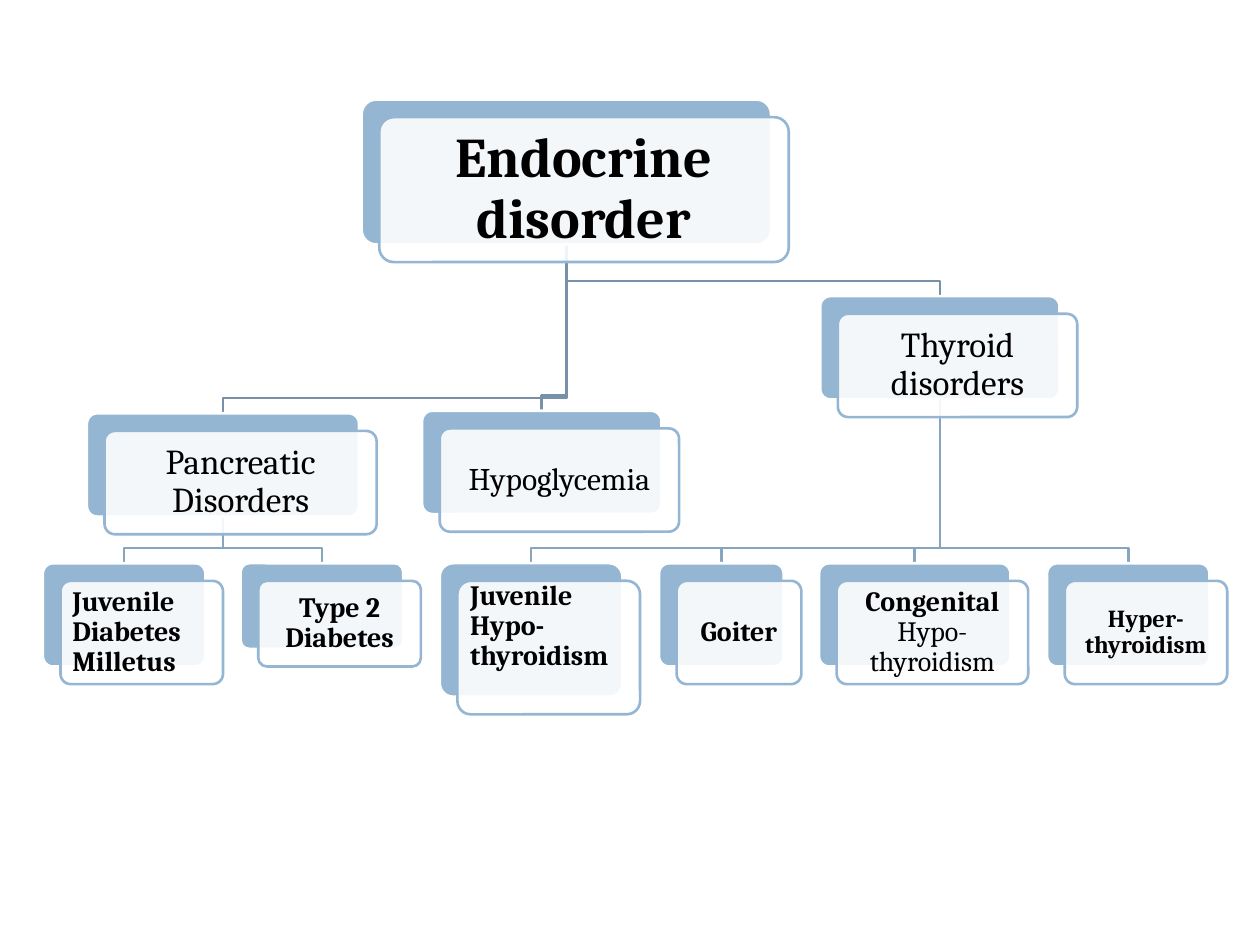
import dataclasses
import lxml.etree
import pptx
import pptx.dml.color
import pptx.enum.shapes
import pptx.enum.text
import pptx.oxml.ns
import pptx.util

ALIGN = pptx.enum.text.PP_ALIGN
ROUND = pptx.enum.shapes.MSO_SHAPE.ROUNDED_RECTANGLE
COLS, ROWS = 100, 75  # grid cells of a tenth of an inch
SHIFT = 1.4           # front card lies this far right and down
DROP = 1.2            # last stretch of a link above its child


@dataclasses.dataclass(frozen=True)
class Theme:
    font: str = "Cambria"
    ink: str = "000000"
    card: str = "94B6D2"
    paper: str = "FFFFFF"
    trunk: str = "7792A8"
    twig: str = "86A5BF"
    line: float = 1.5
    title: int = 32
    head: int = 20
    mid: int = 18
    leaf: int = 16
    small: int = 14


THEME = Theme()


@dataclasses.dataclass(frozen=True)
class Node:
    left: float
    top: float
    width: float
    height: float
    size: int
    runs: tuple  # pairs of text and bold
    pad: float = 0.7
    lift: float = 0  # extra room below the text
    align: int = ALIGN.CENTER

    @property
    def mid(self):
        return self.left + self.width / 2


def cell(count):
    return pptx.util.Inches(count / 10)


def color(code):
    return pptx.dml.color.RGBColor.from_string(code)


def stroke(shape, code):
    shape.shadow.inherit = False
    shape.line.color.rgb = color(code)
    shape.line.width = pptx.util.Pt(THEME.line)


def link(slide, top, low, code):
    """Elbow line from the foot of one node to the head of another."""
    turn = low.top - DROP
    spots = [(top.mid, top.top + top.height), (top.mid, turn),
             (low.mid, turn), (low.mid, low.top)]
    spots = [(cell(x), cell(y)) for x, y in spots]
    build = slide.shapes.build_freeform(*spots[0])
    build.add_line_segments(spots[1:], close=False)
    shape = build.convert_to_shape()
    shape.fill.background()
    stroke(shape, code)


def card(slide, node, shift, fill, edge):
    shape = slide.shapes.add_shape(
        ROUND, cell(node.left + shift), cell(node.top + shift),
        cell(node.width), cell(node.height))
    shape.adjustments[0] = 0.1
    shape.fill.solid()
    shape.fill.fore_color.rgb = color(fill)
    stroke(shape, edge)
    return shape


def fade(shape, share):
    tone = shape.fill._xPr.find(".//" + pptx.oxml.ns.qn("a:srgbClr"))
    alpha = lxml.etree.SubElement(tone, pptx.oxml.ns.qn("a:alpha"))
    alpha.set("val", str(share * 1000))


def label(slide, node):
    gap = 0.03 * node.height  # keeps text clear of the round corners
    box = slide.shapes.add_textbox(
        cell(node.left + SHIFT + gap), cell(node.top + SHIFT + gap),
        cell(node.width - 2 * gap), cell(node.height - 2 * gap))
    frame = box.text_frame
    frame.word_wrap = True
    frame.vertical_anchor = pptx.enum.text.MSO_ANCHOR.MIDDLE
    frame.margin_left = frame.margin_right = frame.margin_top = cell(node.pad)
    frame.margin_bottom = cell(node.pad + node.lift)
    para = frame.paragraphs[0]
    para.alignment = node.align
    para.line_spacing = 0.9
    para.font.name = THEME.font
    para.font.size = pptx.util.Pt(node.size)
    para.font.color.rgb = color(THEME.ink)
    for text, bold in node.runs:
        run = para.add_run()
        run.text = text
        run.font.bold = bold


def draw(slide, node):
    card(slide, node, 0, THEME.card, THEME.paper)
    fade(card(slide, node, SHIFT, THEME.paper, THEME.card), 90)
    label(slide, node)


def main():
    deck = pptx.Presentation()
    deck.slide_width, deck.slide_height = cell(COLS), cell(ROWS)
    slide = deck.slides.add_slide(deck.slide_layouts[6])

    # Root and its branches
    root = Node(28.7, 7.9, 32.5, 11.5, THEME.title,
                (("Endocrine disorder", True),), pad=1.3)
    pancreas = Node(6.9, 32.8, 21.6, 8.2, THEME.head,
                    (("Pancreatic Disorders", False),), pad=0.8)
    sugar = Node(33.5, 32.6, 19, 8.2, THEME.mid, (("Hypoglycemia", False),))
    thyroid = Node(65.1, 23.5, 19, 8.2, THEME.head,
                   (("Thyroid disorders", False),), pad=0.8)

    # Leaves, all on one row
    row, tall = 44.7, 8.2
    diabetes = [
        Node(3.4, row, 12.9, tall, THEME.leaf,
             (("Juvenile Diabetes Milletus", True),), align=ALIGN.LEFT),
        Node(19.1, row, 12.9, 6.8, THEME.leaf, (("Type 2 Diabetes", True),)),
    ]
    glands = [
        Node(34.9, row, 14.5, 10.6, THEME.leaf,
             (("Juvenile Hypo-thyroidism", True),), lift=3.4,
             align=ALIGN.LEFT),
        Node(52.3, row, 9.9, tall, THEME.leaf, (("Goiter", True),)),
        Node(65, row, 15.2, tall, THEME.leaf,
             (("Congenital ", True), ("Hypo-thyroidism", False))),
        Node(83.1, row, 12.9, tall, THEME.small,
             (("Hyper-thyroidism", True),), pad=0.6),
    ]

    # Links lie behind the cards
    tree = [(thyroid, glands[::-1], THEME.twig),
            (root, [thyroid, sugar], THEME.trunk),
            (pancreas, diabetes[::-1], THEME.twig),
            (root, [pancreas], THEME.trunk)]
    for top, lows, code in tree:
        for low in lows:
            link(slide, top, low, code)

    for node in [root, pancreas, *diabetes, sugar, thyroid, *glands]:
        draw(slide, node)
    deck.save("out.pptx")


if __name__ == "__main__":
    main()
